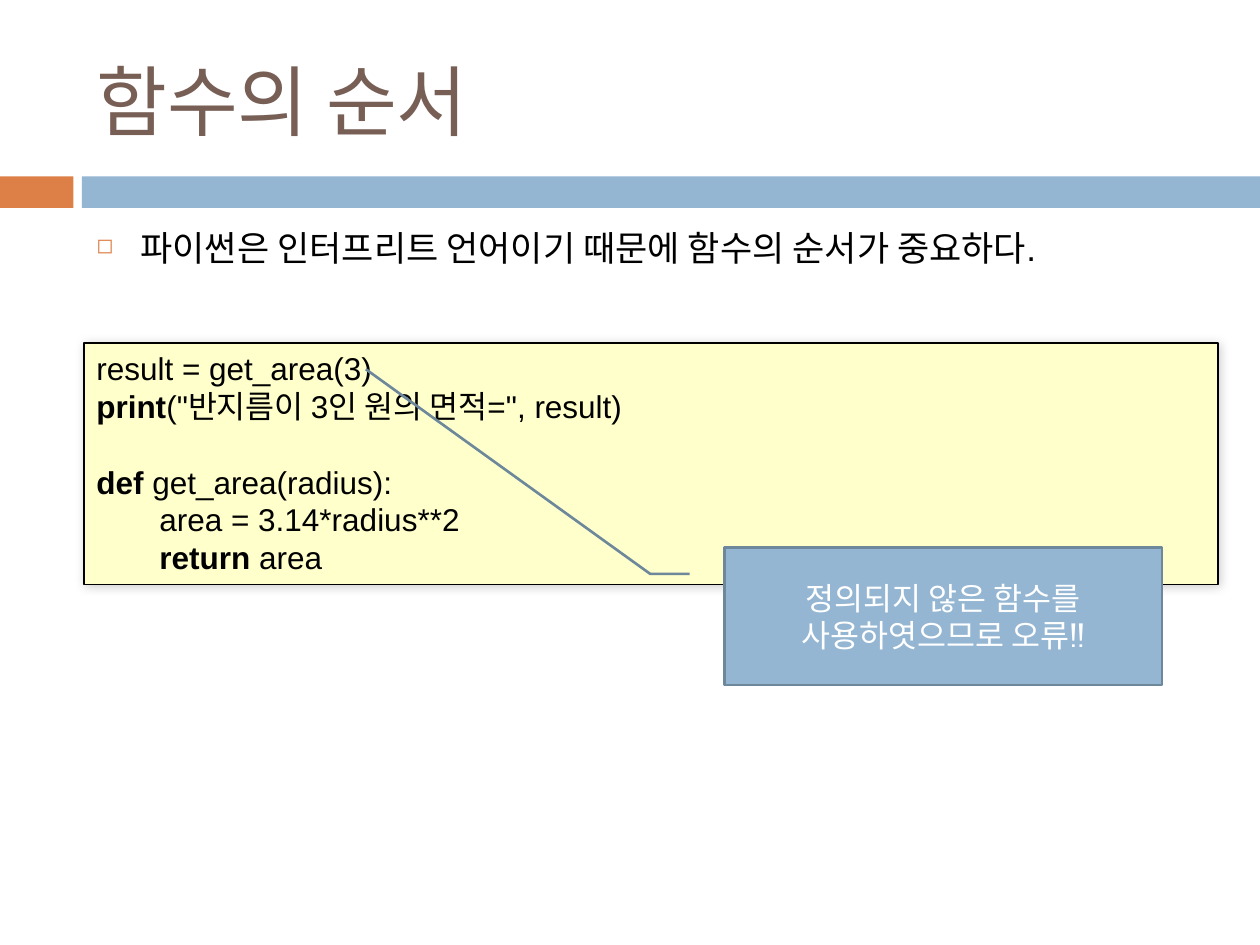
from pptx import Presentation
from pptx.dml.color import RGBColor as RGB
from pptx.enum.shapes import MSO_SHAPE as Kind
from pptx.enum.text import MSO_ANCHOR as Anchor, PP_ALIGN as Align
from pptx.oxml import parse_xml
from pptx.oxml.ns import nsdecls
from pptx.util import Pt

HUE = {
    "orange": "DD8047", "blue": "94B6D2", "edge": "6D879B", "brown": "775F55",
    "cream": "FFFFCC", "black": "000000", "white": "FFFFFF",
}


def node(tag, attrs, inner=""):
    return parse_xml(f'<a:{tag} {nsdecls("a")} {attrs}>{inner}</a:{tag}>')


def tint(name):
    return RGB.from_string(HUE[name])


class Deck:
    def __init__(self):
        self.prs = Presentation()
        self.prs.slide_width, self.prs.slide_height = Pt(720), Pt(540)
        self.slide = self.prs.slides.add_slide(self.prs.slide_layouts[6])

    def shape(self, box, fill, line=None, width=0.75, kind=Kind.RECTANGLE):
        item = self.slide.shapes.add_shape(kind, *map(Pt, box))
        item.shadow.inherit = False
        item.fill.solid()
        item.fill.fore_color.rgb = tint(fill)
        if line:
            item.line.color.rgb = tint(line)
            item.line.width = Pt(width)
        else:
            item.line.fill.background()
        return item

    def glow(self, item):
        """Add a soft, faint shadow with no offset."""
        color = (f'<a:srgbClr val="{HUE["black"]}">'
                 '<a:alpha val="20000"/></a:srgbClr>')
        attrs = f'blurRad="{Pt(6)}" dist="0" dir="18900000" rotWithShape="0"'
        item._element.spPr.find(
            "{*}effectLst").append(node("outerShdw", attrs, color))

    def box(self, place):
        return self.slide.shapes.add_textbox(*map(Pt, place))

    def text(self, item, lines, size, color, font="Arial",
             align=Align.LEFT, anchor=Anchor.TOP):
        """Write lines, each a list of (text, bold) runs."""
        frame = item.text_frame
        frame.word_wrap = True
        frame.vertical_anchor = anchor
        for i, runs in enumerate(lines):
            para = frame.add_paragraph() if i else frame.paragraphs[0]
            para.alignment = align
            for words, bold in runs:
                run = para.add_run()
                run.text = words
                run.font.size, run.font.name = Pt(size), font
                run.font.bold = bold
                run.font.color.rgb = tint(color)
        return frame.paragraphs

    def bullet(self, para, color, indent=25.2):
        para.space_before = Pt(7)
        props = para._p.get_or_add_pPr()
        props.set("marL", str(Pt(indent)))
        props.set("indent", str(-Pt(indent)))
        props.append(node("buClr", "", f'<a:srgbClr val="{HUE[color]}"/>'))
        props.append(node("buSzPct", 'val="60000"'))
        props.append(node("buChar", 'char="◻"'))


def main():
    deck = Deck()
    left, top, band, gap = 48, 100.8, 18, 46.8

    deck.shape((0, top, 42, band), "orange")
    deck.shape((gap, top, 720 - gap, band), "blue")

    title = deck.box((left, 18, 642, 78))
    deck.text(title, [[("함수의 순서", False)]], 44, "brown", "Cabin",
              anchor=Anchor.MIDDLE)

    body = deck.box((left, 126, 642, 354))
    point = "파이썬은 인터프리트 언어이기 때문에 함수의 순서가 중요하다."
    deck.bullet(deck.text(body, [[(point, False)]], 20, "black")[0], "orange")

    code = deck.shape((left, 196, 648, 138), "cream", "black")
    deck.glow(code)
    lines = deck.text(code, [
        [("result = get_area(3)", False)],
        [("print", True), ('("반지름이 3인 원의 면적=", result)', False)],
        [("def ", True), ("get_area(radius):", False)],
        [("\tarea = 3.14*radius**2", False)],
        [("\treturn ", True), ("area", False)],
    ], 18, "black")
    lines[2].space_before = Pt(21.6)

    note = deck.shape((414, 313, 250, 78.5), "blue", "edge", 1.5,
                      Kind.LINE_CALLOUT_2)
    for i, value in enumerate((0.19, -0.08, 0.19, -0.17, -1.3, -0.82)):
        note.adjustments[i] = value
    deck.text(note, [[("정의되지 않은 함수를 사용하엿으므로 오류!!", False)]],
              18, "white", "Cabin", Align.CENTER, Anchor.MIDDLE)

    deck.prs.save("out.pptx")


if __name__ == "__main__":
    main()
